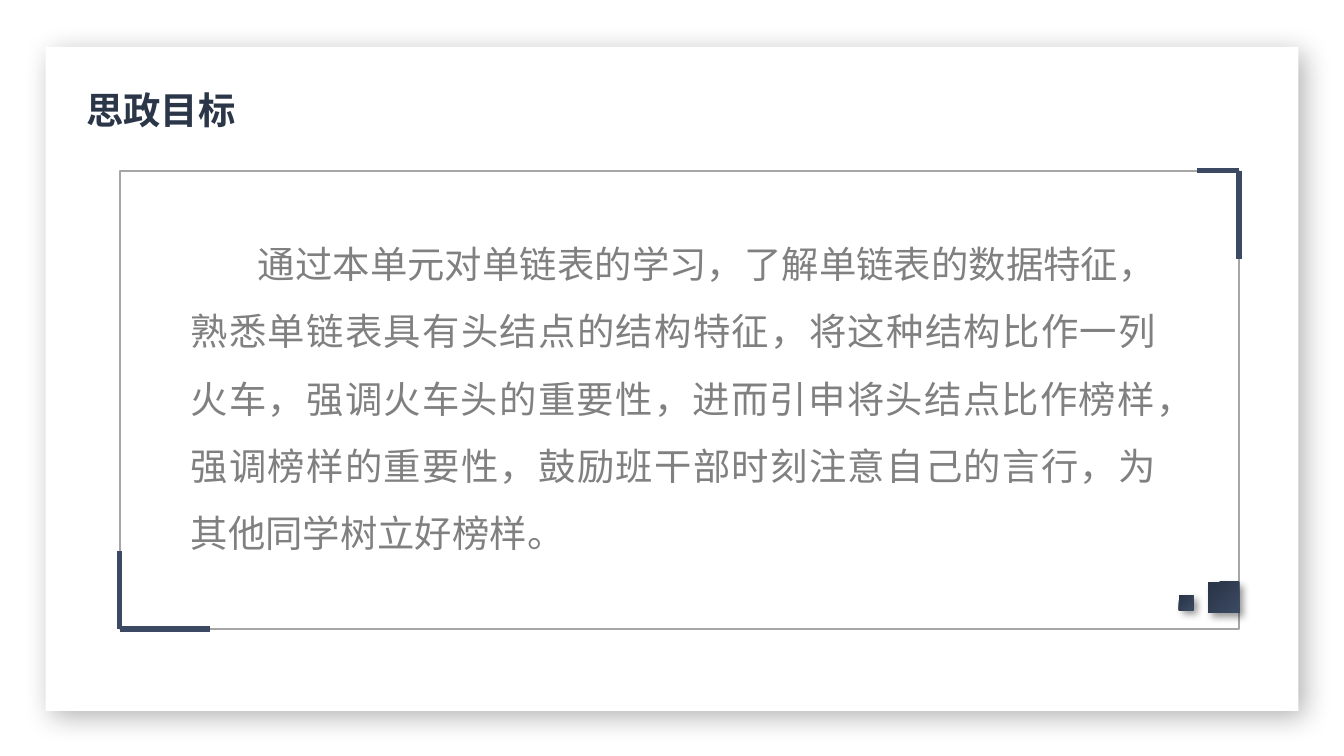
from dataclasses import dataclass

from lxml import etree
from pptx import Presentation
from pptx import util as u
from pptx.dml.color import RGBColor
from pptx.enum import shapes, text
from pptx.oxml import ns


@dataclass(frozen=True)
class Theme:
    font: str = "Noto Sans CJK SC"
    size: int = 20
    white: RGBColor = RGBColor(0xFF, 0xFF, 0xFF)
    navy: RGBColor = RGBColor(0x2B, 0x36, 0x49)
    slate: RGBColor = RGBColor(0x3B, 0x4A, 0x62)
    body: RGBColor = RGBColor(0x80, 0x80, 0x80)
    frame: RGBColor = RGBColor(0xA6, 0xA6, 0xA6)


def add_shadowed_rectangle(left, top, width, height, opacity, blur, distance):
    """Add a borderless rectangle whose shadow falls to the lower right."""
    shape = page.shapes.add_shape(
        shapes.MSO_SHAPE.RECTANGLE, *map(u.Inches, (left, top, width, height)))
    shape.line.fill.background()
    shape.shadow.inherit = False
    effects = shape._element.spPr.find(ns.qn("a:effectLst"))
    shadow = etree.SubElement(
        effects, ns.qn("a:outerShdw"), blurRad=str(u.Pt(blur)),
        dist=str(u.Pt(distance)), dir=str(45 * 60000), algn="tl", rotWithShape="0")
    color = etree.SubElement(shadow, ns.qn("a:srgbClr"), val="000000")
    etree.SubElement(color, ns.qn("a:alpha"), val=str(opacity * 1000))
    return shape


def style_paragraph(para, color, bold=False):
    font = para.font
    font.name = theme.font
    font.size = u.Pt(theme.size)
    font.bold = bold
    font.color.rgb = color
    etree.SubElement(font._element, ns.qn("a:ea"), typeface=theme.font)


theme = Theme()
deck = Presentation()
deck.slide_width = u.Inches(10)
deck.slide_height = u.Inches(10 * 9 / 16)
page = deck.slides.add_slide(deck.slide_layouts[6])

# White card behind everything
card = add_shadowed_rectangle(0.34, 0.35, 9.32, 4.94, opacity=30, blur=15, distance=5)
card.fill.solid()
card.fill.fore_color.rgb = theme.white

# Heading
box = page.shapes.add_textbox(
    u.Inches(0.64), u.Inches(0.61), u.Inches(1.12), u.Inches(0.4))
frame = box.text_frame
frame.word_wrap = False
frame.auto_size = text.MSO_AUTO_SIZE.SHAPE_TO_FIT_TEXT
frame.margin_left = frame.margin_right = frame.margin_top = 0
frame.margin_bottom = u.Inches(0.05)
para = frame.paragraphs[0]
para.text = "思政目标"
para.line_spacing = u.Pt(27)
style_paragraph(para, theme.navy, bold=True)

# Body text
box = page.shapes.add_textbox(
    u.Inches(1.32), u.Inches(1.58), u.Inches(7.38), u.Inches(2.57))
frame = box.text_frame
frame.word_wrap = True
frame.auto_size = text.MSO_AUTO_SIZE.SHAPE_TO_FIT_TEXT
para = frame.paragraphs[0]
para.text = (
    "通过本单元对单链表的学习，了解单链表的数据特征，"
    "熟悉单链表具有头结点的结构特征，将这种结构比作一列火车，"
    "强调火车头的重要性，进而引申将头结点比作榜样，"
    "强调榜样的重要性，鼓励班干部时刻注意自己的言行，为其他同学树立好榜样。"
)
para.alignment = text.PP_ALIGN.JUSTIFY
para.line_spacing = 1.5
properties = para._p.get_or_add_pPr()
properties.set("marL", "0")
properties.set("indent", str(u.Inches(0.5)))
style_paragraph(para, theme.body)

# Thin frame with heavy strokes at two opposite corners
left, top, right, bottom = 0.89, 1.27, 9.22, 4.68
border = page.shapes.add_shape(
    shapes.MSO_SHAPE.RECTANGLE, u.Inches(left), u.Inches(top),
    u.Inches(right - left), u.Inches(bottom - top))
border.shadow.inherit = False
border.fill.background()
border.line.color.rgb = theme.frame
border.line.width = u.Pt(1)

for x, y, across, down in [
    (left, bottom, 0.67, 0),
    (left, bottom, 0, -0.58),
    (right, top, 0, 0.66),
    (right, top, -0.31, 0),
]:
    stroke = page.shapes.add_connector(
        shapes.MSO_CONNECTOR.STRAIGHT, u.Inches(x), u.Inches(y),
        u.Inches(x + across), u.Inches(y + down))
    stroke.line.color.rgb = theme.slate
    stroke.line.width = u.Pt(3)
    etree.SubElement(stroke._element.spPr, ns.qn("a:effectLst"))

# Gradient squares in the lower right corner
for x, y, side in [(8.99, 4.33, 0.23), (8.77, 4.43, 0.11)]:
    square = add_shadowed_rectangle(x, y, side, side, opacity=40, blur=4, distance=3)
    square.fill.gradient()
    square.fill.gradient_angle = 315
    stops = square.fill.gradient_stops
    for stop, position, color in zip(stops, (0.11, 1), (theme.navy, theme.slate)):
        stop.position = position
        stop.color.rgb = color

deck.save("out.pptx")
